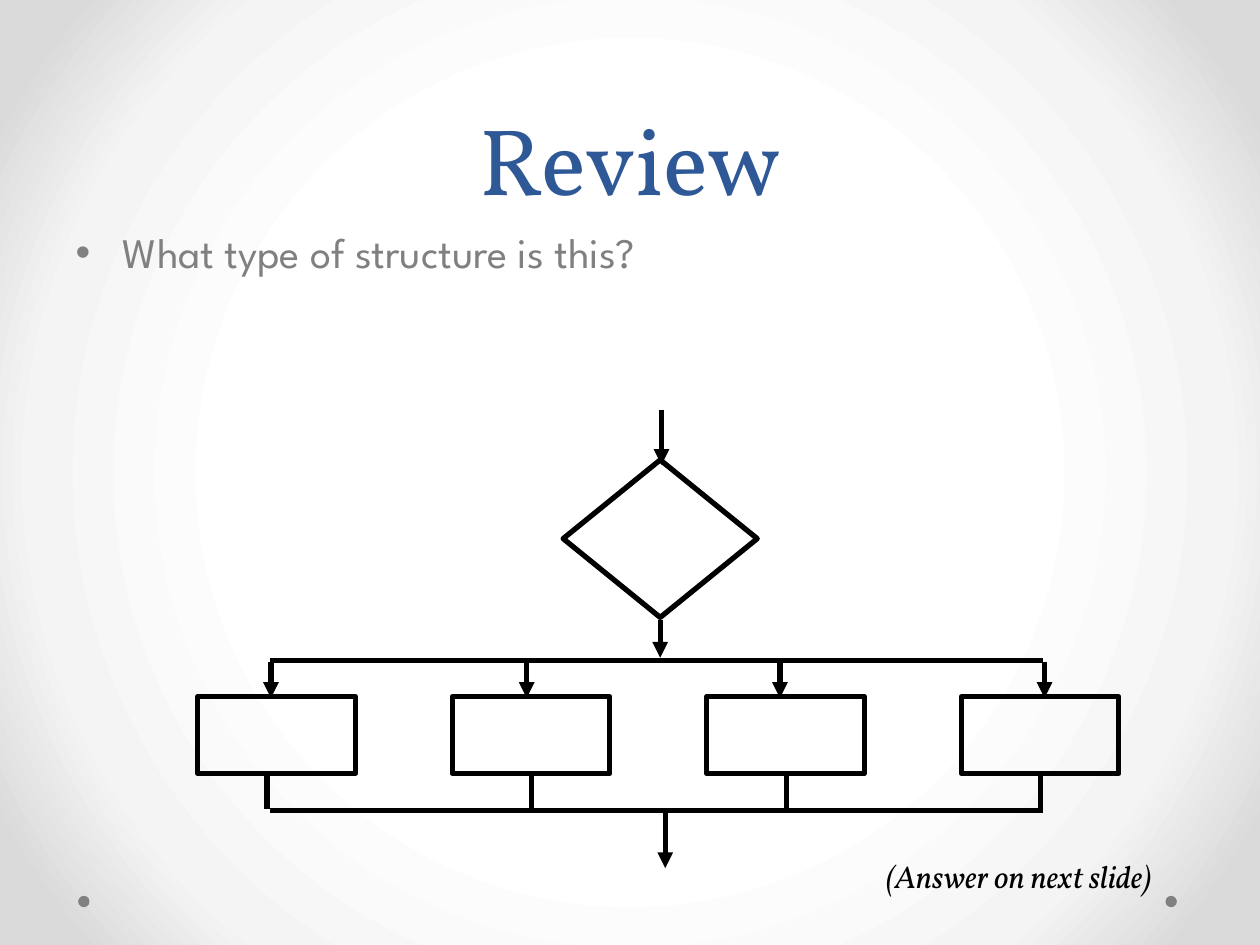
from lxml import etree
from pptx import Presentation
from pptx.dml.color import RGBColor
from pptx.enum import shapes, text
from pptx.oxml import parse_xml
from pptx.oxml.ns import qn
from pptx.util import Inches, Pt

COLORS = {"title": "2F5897", "gray": "808080", "ink": "000000"}
BACKGROUND_STOPS = {50: "FFFFFF", 76: "F4F4F4", 92: "DADADA"}
LINE_WIDTH = Pt(3)


def add_line(start, end, arrow=False):
    connector = slide.shapes.add_connector(
        shapes.MSO_CONNECTOR.STRAIGHT, *[Inches(value) for value in start + end])
    connector.line.color.rgb = RGBColor.from_string(COLORS["ink"])
    connector.line.width = LINE_WIDTH
    properties = connector._element.spPr
    etree.SubElement(properties, qn("a:effectLst"))
    if arrow:
        etree.SubElement(properties.find(qn("a:ln")), qn("a:tailEnd"), type="triangle")


def add_preset(kind, box, fill=None):
    """Add a solid dot when fill is given, otherwise an outlined flowchart node."""
    shape = slide.shapes.add_shape(kind, *[Inches(value) for value in box])
    shape.shadow.inherit = False
    if fill:
        shape.fill.solid()
        shape.fill.fore_color.rgb = RGBColor.from_string(fill)
        shape.line.fill.background()
    else:
        shape.fill.background()
        shape.line.color.rgb = RGBColor.from_string(COLORS["ink"])
        shape.line.width = LINE_WIDTH


presentation = Presentation()
presentation.slide_width, presentation.slide_height = Inches(10), Inches(7.5)
slide = presentation.slides.add_slide(presentation.slide_layouts[1])

# Circular background gradient
slide.background.fill.gradient()
gradient = slide.background._cSld.find(".//" + qn("a:gradFill"))
stops = "".join(f'<a:gs pos="{position * 1000}"><a:srgbClr val="{color}"/></a:gs>'
                for position, color in BACKGROUND_STOPS.items())
gradient.getparent().replace(gradient, parse_xml(
    '<a:gradFill xmlns:a="http://schemas.openxmlformats.org/drawingml/2006/main" '
    f'rotWithShape="1"><a:gsLst>{stops}</a:gsLst><a:path path="circle">'
    '<a:fillToRect l="50000" t="50000" r="50000" b="50000"/></a:path></a:gradFill>'))

for left in (0.62, 9.25):
    add_preset(shapes.MSO_SHAPE.OVAL, (left, 7.11, 0.09, 0.09), COLORS["gray"])

# Title, question and note
title, body = slide.shapes.title, slide.placeholders[1]
note = slide.shapes.add_textbox(0, 0, 0, 0)
text_items = [
    (title, "Review", (0.5, 0, 9, 1.75), "title",
     {"name": "Vollkorn", "size": Pt(54)},
     {"alignment": text.PP_ALIGN.CENTER, "line_spacing": Pt(58)}),
    (body, "What type of structure is this?", (0.5, 1.75, 9, 4.95), "gray",
     {"name": "League Spartan", "size": Pt(24)}, {"space_before": Pt(4.8)}),
    (note, "(Answer on next slide)", (6.93, 6.75, 2.6, 0.4), "ink",
     {"name": "Vollkorn", "size": Pt(18), "italic": True}, {"space_before": Pt(9)}),
]
for shape, wording, box, color, font_format, paragraph_format in text_items:
    shape.left, shape.top, shape.width, shape.height = [Inches(value) for value in box]
    frame = shape.text_frame
    frame.text = wording
    frame.word_wrap = True
    frame.auto_size = text.MSO_AUTO_SIZE.NONE
    paragraph = frame.paragraphs[0]
    for name, value in paragraph_format.items():
        setattr(paragraph, name, value)
    font = paragraph.runs[0].font
    font.color.rgb = RGBColor.from_string(COLORS[color])
    for name, value in font_format.items():
        setattr(font, name, value)
title.text_frame.vertical_anchor = text.MSO_ANCHOR.BOTTOM
note.text_frame.auto_size = text.MSO_AUTO_SIZE.SHAPE_TO_FIT_TEXT

# Decision with its entry and exit
add_preset(shapes.MSO_SHAPE.FLOWCHART_DECISION, (4.47, 3.65, 1.54, 1.25))
add_line((5.25, 3.25), (5.25, 3.69), arrow=True)
add_line((5.24, 4.92), (5.24, 5.22), arrow=True)

# Four branches between two horizontal rails
top_rail, bottom_rail = 5.24, 6.43
for rail in (top_rail, bottom_rail):
    add_line((2.14, rail), (8.28, rail))
branches = [(2.15, 2.12), (4.18, 4.22), (6.19, 6.24), (8.29, 8.26)]
for index, (entry, leave) in enumerate(branches):
    add_preset(shapes.MSO_SHAPE.RECTANGLE, (1.57 + 2.02 * index, 5.53, 1.25, 0.61))
    add_line((entry, 5.25), (entry, 5.54), arrow=True)
    add_line((leave, 6.42), (leave, 6.12))
add_line((5.28, 6.44), (5.28, 6.89), arrow=True)

presentation.save("out.pptx")
